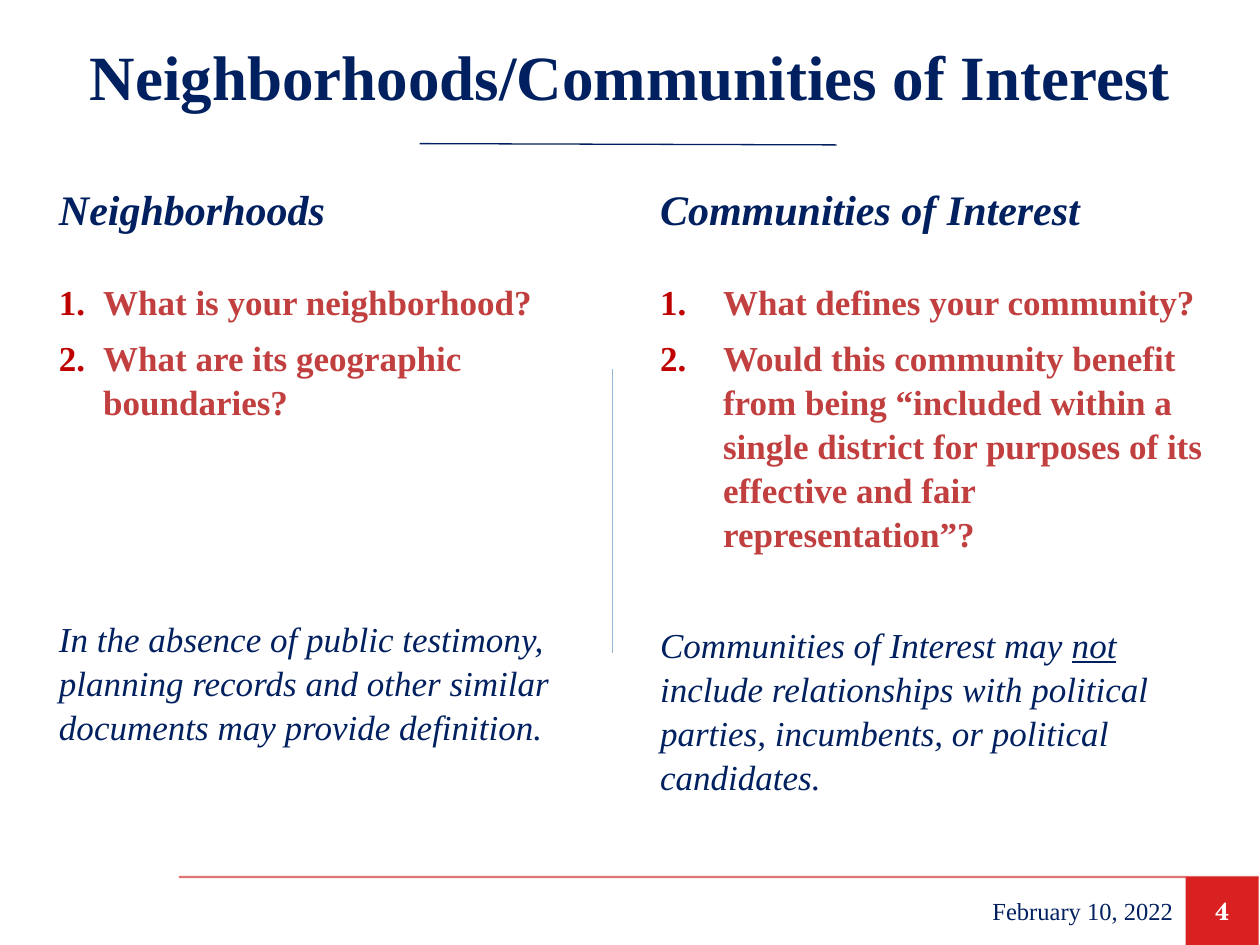
"""Build the slide comparing neighborhoods with communities of interest."""
from lxml.etree import SubElement
from pptx import Presentation
from pptx.dml.color import RGBColor
from pptx.enum.shapes import MSO_CONNECTOR, MSO_SHAPE
from pptx.enum.text import MSO_ANCHOR, PP_ALIGN
from pptx.oxml.ns import qn
from pptx.util import Inches, Pt

COLORS = {"navy": "002060", "question": "C13F3F", "number": "BF0000",
          "box": "D92121", "rule": "C80000", "divider": "94B6D2", "white": "FFFFFF"}
SERIF = "Times New Roman"


def add_text(paragraph, text, size, color, bold=False, italic=False, underline=False, name=SERIF):
    run = paragraph.add_run()
    run.text = text
    font = run.font
    font.name, font.size, font.bold, font.italic = name, Pt(size), bold, italic
    font.underline = underline
    font.color.rgb = RGBColor.from_string(COLORS[color])


def add_box(left, top, width, height, anchor=MSO_ANCHOR.MIDDLE):
    shape = slide.shapes.add_textbox(Inches(left), Inches(top), Inches(width), Inches(height))
    shape.text_frame.word_wrap = True
    shape.text_frame.vertical_anchor = anchor
    return shape.text_frame


presentation = Presentation()
presentation.slide_width, presentation.slide_height = Inches(10), Inches(7.5)
slide = presentation.slides.add_slide(presentation.slide_layouts[6])

lines = [
    (1.42, 6.96, 9.99, 6.96, "rule", 1.25, 55),
    (4.86, 2.93, 4.86, 5.18, "divider", 0.79, 100),
    (3.33, 1.14, 6.64, 1.15, "navy", 0.75, 100),
]
for left, top, right, bottom, color, width, opacity in lines:
    connector = slide.shapes.add_connector(
        MSO_CONNECTOR.STRAIGHT, Inches(left), Inches(top), Inches(right), Inches(bottom))
    connector.line.color.rgb = RGBColor.from_string(COLORS[color])
    connector.line.width = Pt(width)
    properties = connector._element.spPr
    if opacity < 100:
        SubElement(properties.find(".//" + qn("a:srgbClr")), qn("a:alpha"), val=str(opacity * 1000))
    SubElement(properties, qn("a:effectLst"))

title = add_box(0, 0.06, 10, 1.08).paragraphs[0]
title.alignment = PP_ALIGN.CENTER
add_text(title, "Neighborhoods/Communities of Interest", 36, "navy", bold=True)

columns = [
    (0.37, 4.33, 5.29, 0.35, 110, "Neighborhoods",
     ["What is your neighborhood?", "What are its geographic boundaries?"],
     ["In the absence of public testimony, planning records and other similar "
      "documents may provide definition."]),
    (5.14, 4.51, 5.18, 0.5, 38, "Communities of Interest",
     ["What defines your community?",
      "Would this community benefit from being “included within a single district "
      "for purposes of its effective and fair representation”?"],
     ["Communities of Interest may ", "not",
      " include relationships with political parties, incumbents, or political candidates."]),
]
for left, width, height, indent, gap, heading, questions, closing in columns:
    text_frame = add_box(left, 1.39, width, height, MSO_ANCHOR.TOP)
    paragraph = text_frame.paragraphs[0]
    paragraph.line_spacing = 1.05
    add_text(paragraph, heading, 24, "navy", bold=True, italic=True)
    for question, space in zip(questions, (25, 7)):
        paragraph = text_frame.add_paragraph()
        paragraph.line_spacing = 1.05
        paragraph.space_before = Pt(space)
        properties = paragraph._p.get_or_add_pPr()
        properties.set("marL", str(Inches(indent)))
        properties.set("indent", str(-Inches(indent)))
        bullet_color = SubElement(properties, qn("a:buClr"))
        SubElement(bullet_color, qn("a:srgbClr"), val=COLORS["number"])
        SubElement(properties, qn("a:buFont"), typeface=SERIF)
        SubElement(properties, qn("a:buAutoNum"), type="arabicPeriod")
        add_text(paragraph, question, 20, "question", bold=True)
    paragraph = text_frame.add_paragraph()
    paragraph.line_spacing = 1.05
    paragraph.space_before = Pt(gap)
    for text in closing:
        add_text(paragraph, text, 20, "navy", italic=True, underline=text == "not")

number_box = slide.shapes.add_shape(
    MSO_SHAPE.RECTANGLE, Inches(9.41), Inches(6.96), Inches(0.58), Inches(0.54))
number_box.shadow.inherit = False
number_box.fill.solid()
number_box.fill.fore_color.rgb = RGBColor.from_string(COLORS["box"])
number_box.line.fill.background()
number_box.text_frame.vertical_anchor = MSO_ANCHOR.MIDDLE
number = number_box.text_frame.paragraphs[0]
number.alignment = PP_ALIGN.CENTER
add_text(number, "4", 14, "white", bold=True, name="TeX Gyre Schola")

date = add_box(7.67, 6.96, 1.74, 0.54).paragraphs[0]
date.alignment = PP_ALIGN.RIGHT
add_text(date, "February 10, 2022", 14, "navy")

presentation.save("out.pptx")
